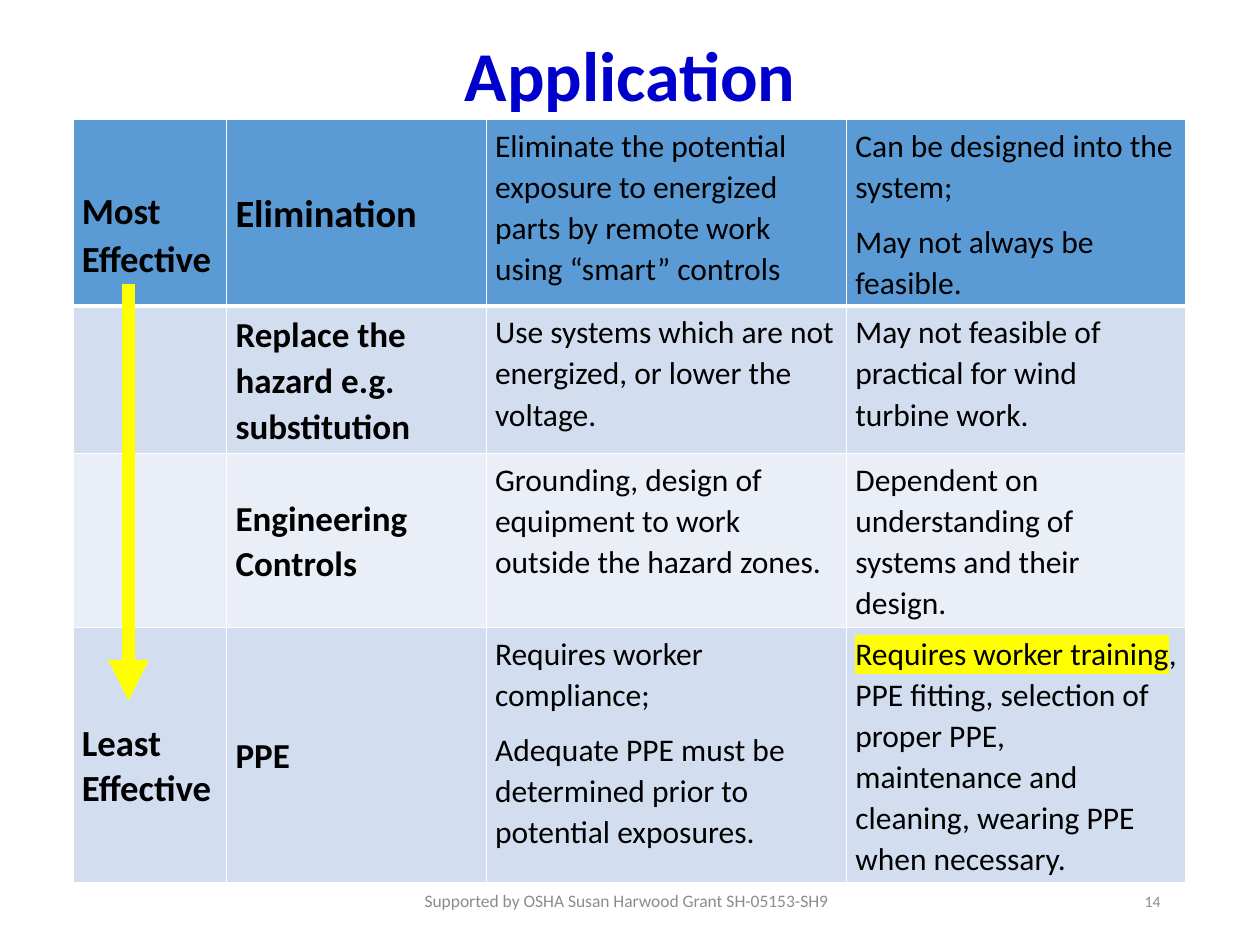
from dataclasses import dataclass

from lxml import etree
from pptx import Presentation
from pptx.dml.color import RGBColor
from pptx.enum.shapes import MSO_CONNECTOR
from pptx.enum.text import MSO_ANCHOR, PP_ALIGN
from pptx.oxml.ns import qn
from pptx.util import Inches, Pt

LEFT, MID, RIGHT = PP_ALIGN.LEFT, PP_ALIGN.CENTER, PP_ALIGN.RIGHT
TOP, CENTER = MSO_ANCHOR.TOP, MSO_ANCHOR.MIDDLE
STRAIGHT = MSO_CONNECTOR.STRAIGHT


@dataclass(frozen=True)
class Theme:
    font: str = "Calibri"
    title: str = "0000CC"
    ink: str = "000000"
    muted: str = "8C8C8C"
    rule: str = "FFFFFF"
    mark: str = "FFFF00"
    fills: tuple = ("5B9BD5", "D2DEEF", "EAEFF7", "D2DEEF")
    head: int = 40
    top: int = 22
    end: int = 21
    label: int = 20
    body: int = 18
    foot: int = 10
    page: int = 9


@dataclass
class Cell:
    paras: tuple = ()
    size: int = 18
    bold: bool = False
    anchor: MSO_ANCHOR = TOP
    inset: float = 0.04
    line: float = 1.07
    after: int = 8
    marked: str = ""


class Deck:
    def __init__(self, theme):
        self.theme = theme
        self.file = Presentation()
        self.file.slide_width, self.file.slide_height = Inches(10), Inches(7.5)
        self.slide = self.file.slides.add_slide(self.file.slide_layouts[6])

    def run(self, para, text, size, color, bold=False, mark=None):
        run = para.add_run()
        run.text = text
        font = run.font
        font.name, font.size, font.bold = self.theme.font, Pt(size), bold
        font.color.rgb = RGBColor.from_string(color)
        if mark:
            light = etree.Element(qn("a:highlight"))
            etree.SubElement(light, qn("a:srgbClr"), val=mark)
            run.font._element.find(qn("a:solidFill")).addnext(light)

    def text(self, box, text, size, color, align, bold=False):
        shape = self.slide.shapes.add_textbox(*map(Inches, box))
        frame = shape.text_frame
        frame.word_wrap = True
        frame.vertical_anchor = CENTER
        para = frame.paragraphs[0]
        para.alignment = align
        self.run(para, text, size, color, bold)

    def border(self, cell, base):
        props = cell._tc.get_or_add_tcPr()
        for side, width in (("L", 1), ("R", 1), ("T", 1), ("B", base)):
            line = etree.SubElement(props, qn(f"a:ln{side}"), w=str(Pt(width)))
            fill = etree.SubElement(line, qn("a:solidFill"))
            etree.SubElement(fill, qn("a:srgbClr"), val=self.theme.rule)

    def cell(self, cell, data, fill, base):
        self.border(cell, base)
        cell.fill.solid()
        cell.fill.fore_color.rgb = RGBColor.from_string(fill)
        cell.margin_left = cell.margin_right = Inches(0.07)
        cell.margin_top, cell.margin_bottom = Inches(data.inset), Inches(0.04)
        cell.vertical_anchor = data.anchor
        frame = cell.text_frame
        for i, text in enumerate(data.paras):
            para = frame.add_paragraph() if i else frame.paragraphs[0]
            para.alignment = LEFT
            para.line_spacing, para.space_after = data.line, Pt(data.after)
            if data.marked:
                self.run(para, data.marked, data.size, self.theme.ink, mark=self.theme.mark)
            self.run(para, text, data.size, self.theme.ink, data.bold)

    def table(self, left, top, cols, rows, cells):
        box = map(Inches, (left, top, sum(cols), sum(rows)))
        table = self.slide.shapes.add_table(len(rows), len(cols), *box).table
        table.horz_banding = False
        for col, width in zip(table.columns, cols):
            col.width = Inches(width)
        for r, (height, line) in enumerate(zip(rows, cells)):
            table.rows[r].height = Inches(height)
            for c, data in enumerate(line):
                self.cell(table.cell(r, c), data, self.theme.fills[r], 1 if r else 3)

    def arrow(self, start, end, color, width):
        line = self.slide.shapes.add_connector(STRAIGHT, *map(Inches, start + end))
        line.line.color.rgb = RGBColor.from_string(color)
        line.line.width = Pt(width)
        etree.SubElement(line.line._get_or_add_ln(), qn("a:tailEnd"), type="triangle")
        etree.SubElement(line._element.spPr, qn("a:effectLst"))


def label(text, size):
    return Cell((text,), size, True, CENTER)


def main():
    theme = Theme()
    deck = Deck(theme)

    # Title
    deck.text((0.69, 0.07, 8.62, 1.02), "Application", theme.head, theme.title, MID, True)

    # Hierarchy of controls
    cells = [
        [
            Cell(("Most Effective",), theme.end, True, inset=0.53),
            label("Elimination", theme.top),
            Cell(("Eliminate the potential exposure to energized parts by remote work "
                  "using “smart” controls",), theme.body),
            Cell(("Can be designed into the system;", "May not always be feasible."), theme.body),
        ],
        [
            Cell(),
            label("Replace the hazard e.g. substitution", theme.label),
            Cell(("Use systems which are not energized, or lower the voltage.",), theme.body),
            Cell(("May not feasible of practical for wind turbine work.",), theme.body),
        ],
        [
            Cell(),
            label("Engineering Controls", theme.label),
            Cell(("Grounding, design of equipment to work outside the hazard zones.",), theme.body),
            Cell(("Dependent on understanding of systems and their design.",), theme.body),
        ],
        [
            Cell(("Least", "Effective"), theme.end, True, inset=0.75, line=1.0, after=0),
            label("PPE", theme.label),
            Cell(("Requires worker compliance;",
                  "Adequate PPE must be determined prior to potential exposures."), theme.body),
            Cell((", PPE fitting, selection of proper PPE, maintenance and cleaning, "
                  "wearing PPE when necessary.",), theme.body, marked="Requires worker training"),
        ],
    ]
    deck.table(0.58, 0.95, (1.22, 2.06, 2.86, 2.69), (1.48, 1.17, 1.38, 2.03), cells)

    # Arrow from most to least effective
    deck.arrow((1.02, 2.25), (1.02, 5.56), theme.mark, 7.75)

    # Footer and page number
    deck.text((3.18, 6.95, 3.58, 0.4), "Supported by OSHA Susan Harwood Grant SH-05153-SH9",
              theme.foot, theme.muted, MID)
    deck.text((7.06, 6.95, 2.25, 0.4), "14", theme.page, theme.muted, RIGHT)

    deck.file.save("out.pptx")


if __name__ == "__main__":
    main()
